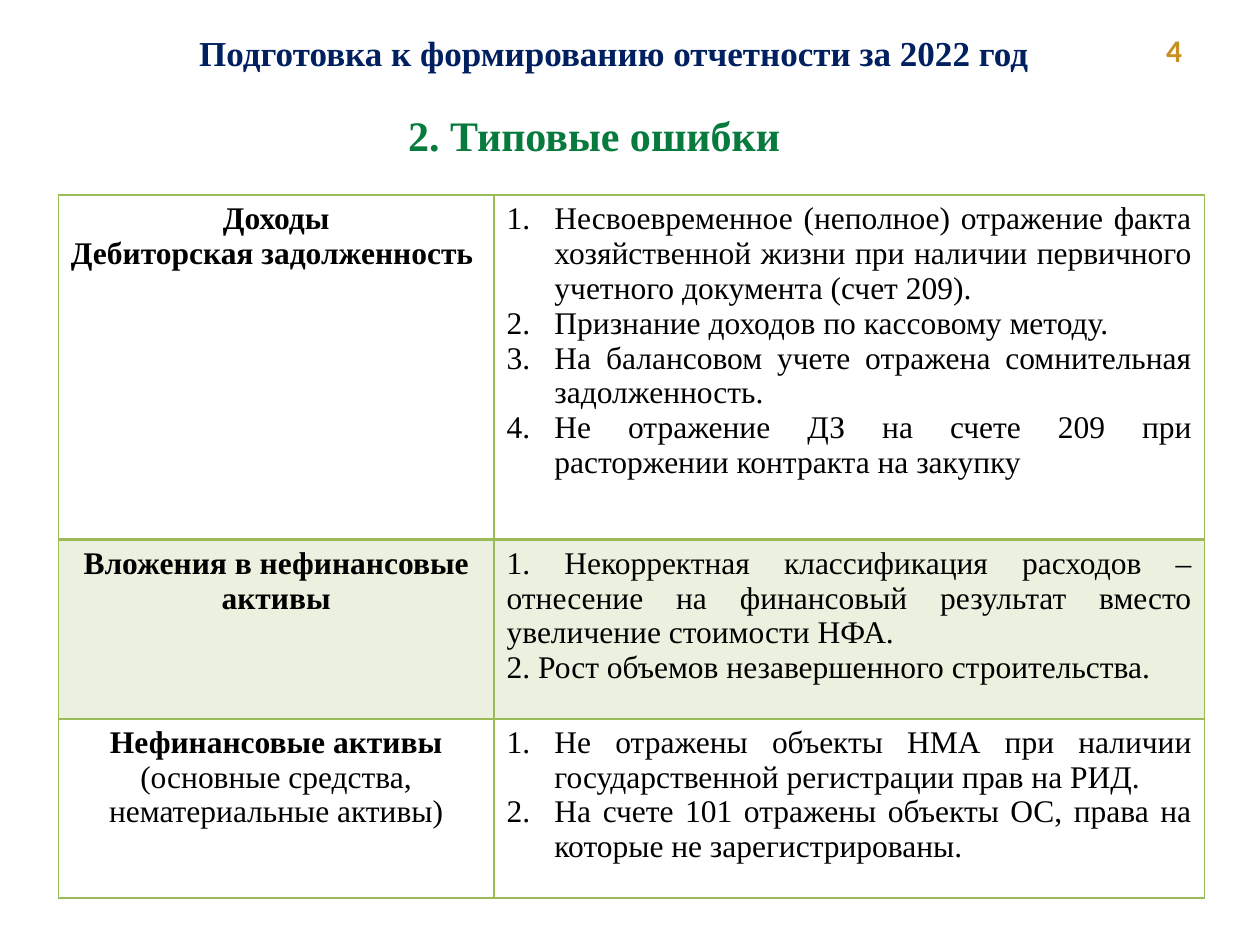
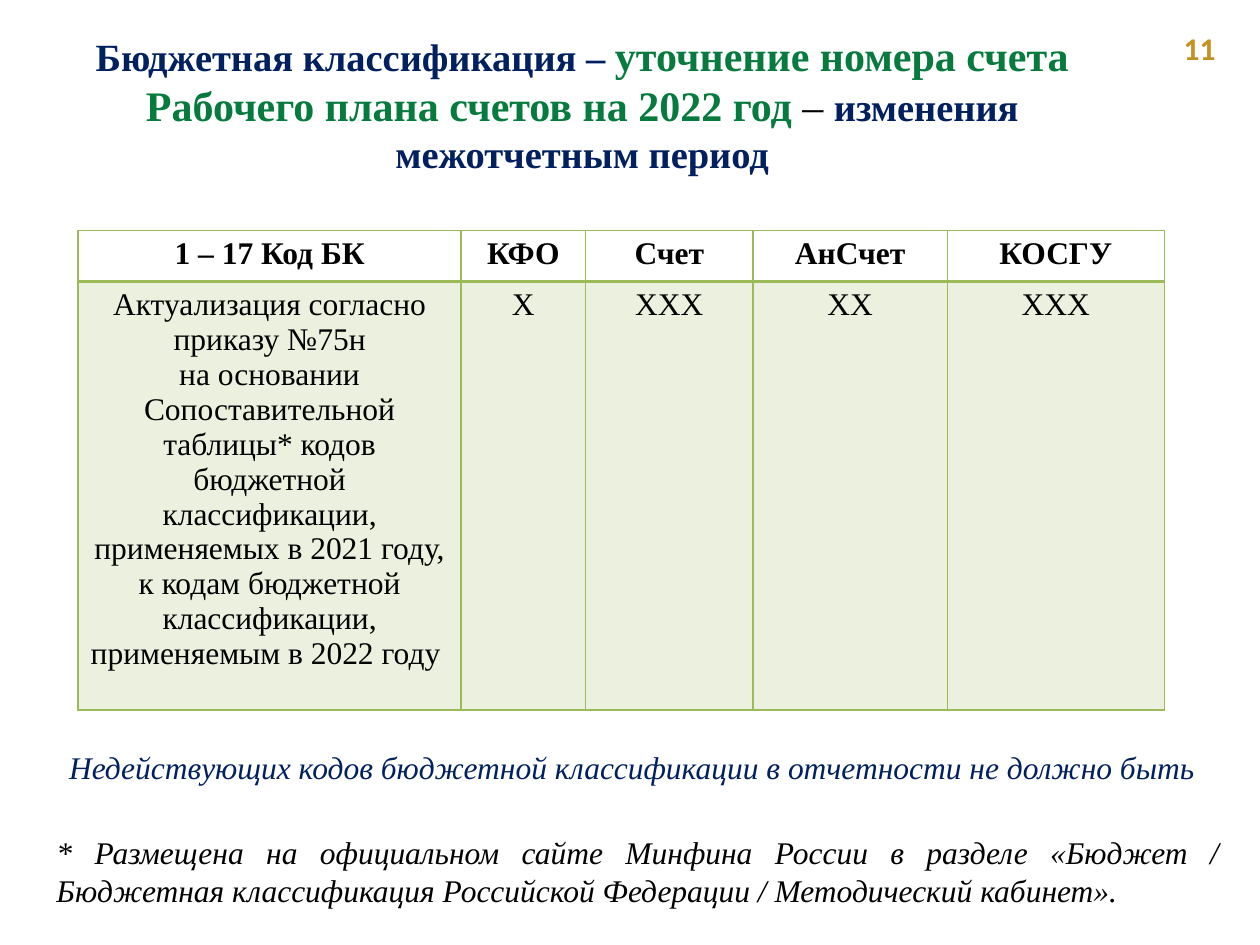
from lxml import etree
from pptx import Presentation
from pptx.dml.color import RGBColor
from pptx.enum.text import MSO_ANCHOR, MSO_AUTO_SIZE, PP_ALIGN
from pptx.oxml.ns import qn
from pptx.util import Pt

LEFT, CENTER, JUSTIFY = PP_ALIGN.LEFT, PP_ALIGN.CENTER, PP_ALIGN.JUSTIFY
TOP = MSO_ANCHOR.TOP
NO_AUTOFIT = MSO_AUTO_SIZE.NONE

NAVY = RGBColor(0x00, 0x20, 0x60)
GREEN = RGBColor(0x07, 0x7A, 0x3E)
GOLD = RGBColor(0xC7, 0x90, 0x23)
BLACK = RGBColor(0x00, 0x00, 0x00)
WHITE = RGBColor(0xFF, 0xFF, 0xFF)
PALE_GREEN = RGBColor(0xEB, 0xF1, 0xDE)
BORDER_GREEN = RGBColor(0x9B, 0xBB, 0x59)

SERIF, SANS = "Times New Roman", "Calibri"
TITLE_ONLY = 5
BODY_SIZE = 18
NUMBER_INDENT = 27.36
THIN, THICK = 1, 2


def format_run(run, size=BODY_SIZE, color=BLACK, bold=False, italic=False, name=SERIF):
    font = run.font
    font.name, font.size = name, Pt(size)
    font.bold, font.italic = bold, italic
    font.color.rgb = color


def add_runs(paragraph, runs, alignment):
    paragraph.alignment = alignment
    for text, style in runs:
        run = paragraph.add_run()
        run.text = text
        format_run(run, **style)


def prepare_frame(shape):
    frame = shape.text_frame
    frame.word_wrap = True
    frame.auto_size = NO_AUTOFIT
    frame.vertical_anchor = TOP
    return frame


def add_text(slide, box, text, alignment, **style):
    shape = slide.shapes.add_textbox(*map(Pt, box))
    add_runs(prepare_frame(shape).paragraphs[0], [(text, style)], alignment)


def add_titled_slide(presentation, title_box, title_runs, number_box, number):
    slide = presentation.slides.add_slide(presentation.slide_layouts[TITLE_ONLY])
    title = slide.shapes.title
    title.left, title.top, title.width, title.height = map(Pt, title_box)
    add_runs(prepare_frame(title).paragraphs[0], title_runs, CENTER)
    add_text(slide, number_box, f" {number}", LEFT, color=GOLD, bold=True, name=SANS)
    return slide


def number_paragraph(paragraph):
    properties = paragraph._p.get_or_add_pPr()
    properties.set("marL", str(Pt(NUMBER_INDENT)))
    properties.set("indent", str(-Pt(NUMBER_INDENT)))
    etree.SubElement(properties, qn("a:buAutoNum"), type="arabicPeriod")


def set_borders(cell, row_index):
    widths = {
        "a:lnL": THIN,
        "a:lnR": THIN,
        "a:lnT": THICK if row_index == 1 else THIN,
        "a:lnB": THICK if row_index == 0 else THIN,
    }
    properties = cell._tc.get_or_add_tcPr()
    for position, (tag, width) in enumerate(widths.items()):
        line = etree.Element(qn(tag), w=str(Pt(width)))
        fill = etree.SubElement(line, qn("a:solidFill"))
        etree.SubElement(fill, qn("a:srgbClr"), val=str(BORDER_GREEN))
        properties.insert(position, line)


def fill_cell(cell, paragraphs, alignment, numbered):
    frame = cell.text_frame
    for index, runs in enumerate(paragraphs):
        paragraph = frame.add_paragraph() if index else frame.paragraphs[0]
        add_runs(paragraph, runs, alignment)
        if numbered:
            number_paragraph(paragraph)


def add_bordered_table(slide, left, top, column_widths, row_heights, rows):
    frame = slide.shapes.add_table(
        len(row_heights), len(column_widths), Pt(left), Pt(top),
        Pt(sum(column_widths)), Pt(sum(row_heights)))
    table = frame.table
    table.first_row = table.horz_banding = False
    for column, width in zip(table.columns, column_widths):
        column.width = Pt(width)
    for row_index, (row, height, contents) in enumerate(zip(table.rows, row_heights, rows)):
        row.height = Pt(height)
        for cell, content in zip(row.cells, contents):
            cell.fill.solid()
            cell.fill.fore_color.rgb = PALE_GREEN if row_index % 2 else WHITE
            set_borders(cell, row_index)
            fill_cell(cell, *content)


def centered(*texts, bold=False):
    return [[(text, {"bold": bold})] for text in texts], CENTER, False


def justified(*texts, numbered=False):
    return [[(text, {})] for text in texts], JUSTIFY, numbered


def build_typical_errors(presentation):
    slide = add_titled_slide(
        presentation, (100.8, 14.4, 500, 32),
        [("Подготовка к формированию отчетности за 2022 год",
          {"size": 20, "color": NAVY, "bold": True})],
        (655.2, 14.4, 52, 29), 4)
    add_text(slide, (204.5, 59, 270, 36), "2. Типовые ошибки", CENTER,
             size=24, color=GREEN, bold=True)
    assets = [[("Нефинансовые активы ", {"bold": True}),
               ("(основные средства, нематериальные активы)", {})]]
    rows = [
        (centered("Доходы", "Дебиторская задолженность ", bold=True),
         justified(
             "Несвоевременное (неполное) отражение факта хозяйственной жизни при наличии "
             "первичного учетного документа (счет 209).",
             "Признание доходов по кассовому методу.",
             "На балансовом учете отражена сомнительная задолженность.",
             "Не отражение ДЗ на счете 209 при расторжении контракта на закупку",
             numbered=True)),
        (centered("Вложения в нефинансовые активы", bold=True),
         justified(
             "1. Некорректная классификация расходов – отнесение на финансовый результат "
             "вместо увеличение стоимости НФА.",
             "2. Рост объемов незавершенного строительства.")),
        ((assets, CENTER, False),
         justified(
             "Не отражены объекты НМА при наличии государственной регистрации прав на РИД.",
             "На счете 101 отражены объекты ОС, права на которые не зарегистрированы.",
             numbered=True)),
    ]
    add_bordered_table(slide, 33.3, 111.5, (249, 406), (197, 102.3, 102.3), rows)


def build_budget_classification(presentation):
    navy_title = {"size": 22, "color": NAVY, "bold": True}
    slide = add_titled_slide(
        presentation, (25.2, 13, 615, 92),
        [("Бюджетная классификация – ", navy_title),
         ("уточнение номера счета Рабочего плана счетов на 2022 год ",
          {"size": 24, "color": GREEN, "bold": True}),
         ("– ", {"size": 24}),
         ("изменения межотчетным период", navy_title)],
        (665.3, 13, 39, 29), 11)
    headings = ("1 – 17 Код БК", "КФО", "Счет", "АнСчет", "КОСГУ")
    update = centered(
        "Актуализация согласно приказу №75н",
        "на основании Сопоставительной таблицы* кодов бюджетной классификации, "
        "применяемых в 2021 году, к кодам бюджетной классификации, "
        "применяемым в 2022 году ")
    rows = [
        [centered(heading, bold=True) for heading in headings],
        [update] + [centered(code) for code in ("Х", "ХХХ", "ХХ", "ХХХ")],
    ]
    add_bordered_table(slide, 44.6, 131.6, (219, 71, 95.8, 111, 124), (29.2, 245), rows)
    add_text(slide, (25.2, 472.3, 679, 51),
             "* Размещена на официальном сайте Минфина России в разделе «Бюджет / "
             "Бюджетная классификация Российской Федерации / Методический кабинет».",
             JUSTIFY, italic=True)
    add_text(slide, (32.4, 424, 679, 29),
             "Недействующих кодов бюджетной классификации в отчетности не должно быть",
             JUSTIFY, color=NAVY, italic=True)


def main():
    presentation = Presentation()
    presentation.slide_width, presentation.slide_height = Pt(720), Pt(540)
    build_typical_errors(presentation)
    build_budget_classification(presentation)
    presentation.save("out.pptx")


if __name__ == "__main__":
    main()
